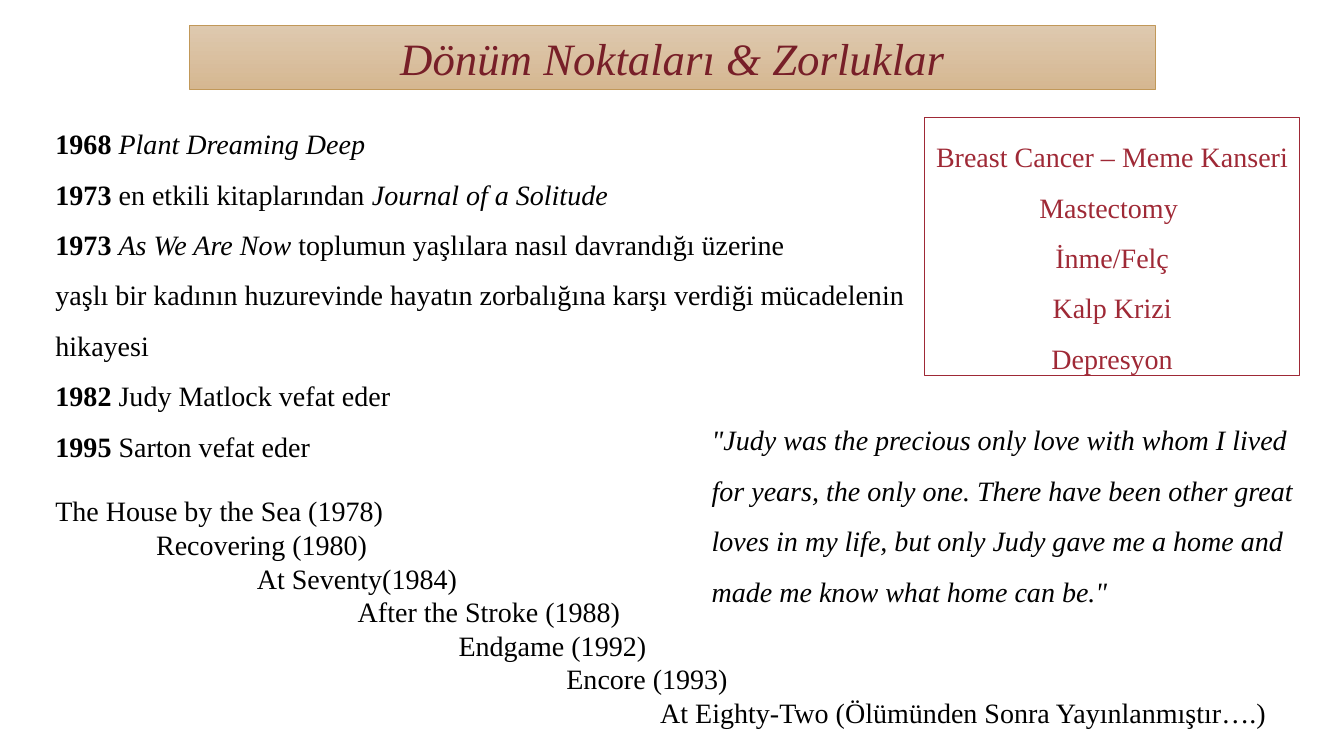
from pptx import Presentation
from pptx.dml.color import RGBColor
from pptx.enum import shapes, text
from pptx.util import Inches, Pt

FONT = "Times New Roman"
BLACK, RED, DARK_RED, GOLD = "000000", "9F2936", "771F28", "C19859"
TITLE_GRADIENT = ("DEC9AF", "D5B791")
STAIR_STEP = 1.0

# Each paragraph is a list of (text, style); style is "b", "i" or "".
TITLE = [[("Dönüm Noktaları & Zorluklar", "i")]]
TIMELINE = [
    [("1968 ", "b"), ("Plant Dreaming Deep", "i")],
    [("1973 ", "b"), ("en etkili kitaplarından ", ""), ("Journal of a Solitude", "i")],
    [("1973 ", "b"), ("As We Are Now ", "i"),
     ("toplumun yaşlılara nasıl davrandığı üzerine", "")],
    [("yaşlı bir kadının huzurevinde hayatın zorbalığına karşı verdiği "
      "mücadelenin hikayesi", "")],
    [("1982", "b"), (" Judy Matlock vefat eder", "")],
    [("1995", "b"), (" Sarton vefat eder", "")],
]
ILLNESSES = ["Breast Cancer – Meme Kanseri", "Mastectomy ", "İnme/Felç",
             "Kalp Krizi", "Depresyon"]
QUOTE = [[('"Judy was the precious only love with whom I lived for years, the only '
           "one. There have been other great loves in my life, but only Judy gave me "
           'a home and made me know what home can be."', "i")]]
BOOKS = ["The House by the Sea (1978)", "Recovering (1980)", "At Seventy(1984)",
         "After the Stroke (1988)", "Endgame (1992)", " Encore (1993)",
         "At Eighty-Two (Ölümünden Sonra Yayınlanmıştır….)"]

# left, top, width, height in inches
TITLE_AREA = (1.88, 0.25, 9.58, 0.64)
TIMELINE_AREA = (0.45, 1.04, 9.23, 3.57)
ILLNESS_AREA = (9.17, 1.17, 3.72, 2.56)
QUOTE_AREA = (6.96, 3.98, 6.22, 2.06)
BOOKS_AREA = (0.45, 4.85, 12.57, 2.46)


def color(value):
    return RGBColor.from_string(value)


def plain(lines):
    """Turn strings into unstyled one-run paragraphs."""
    return [[(line, "")] for line in lines]


def place(shape, area):
    shape.left, shape.top, shape.width, shape.height = map(Inches, area)


def outline(shape, value, width):
    shape.line.color.rgb = color(value)
    shape.line.width = Pt(width)


def write(shape, paragraphs, size=20, ink=BLACK, align=text.PP_ALIGN.LEFT,
          spacing=1.5, step=0, wrap=True, anchor=text.MSO_ANCHOR.TOP):
    """Fill a shape with text, indenting each paragraph one step further."""
    frame = shape.text_frame
    frame.word_wrap = wrap
    frame.auto_size = text.MSO_AUTO_SIZE.NONE
    frame.vertical_anchor = anchor
    for index, runs in enumerate(paragraphs):
        paragraph = frame.add_paragraph() if index else frame.paragraphs[0]
        paragraph.alignment = align
        paragraph.line_spacing = spacing
        paragraph.space_before = Pt(0)
        properties = paragraph._p.get_or_add_pPr()
        properties.set("marL", str(Inches(step * index)))
        properties.set("indent", "0")
        properties.append(properties.makeelement(
            "{http://schemas.openxmlformats.org/drawingml/2006/main}buNone", {}))
        for content, style in runs:
            run = paragraph.add_run()
            run.text = content
            run.font.name, run.font.size = FONT, Pt(size)
            run.font.bold, run.font.italic = style == "b", style == "i"
            run.font.color.rgb = color(ink)


def main():
    presentation = Presentation()
    presentation.slide_width, presentation.slide_height = Inches(13.33), Inches(7.5)
    slide = presentation.slides.add_slide(presentation.slide_layouts[1])
    center = text.PP_ALIGN.CENTER

    title = slide.shapes.title
    place(title, TITLE_AREA)
    title.fill.gradient()
    title.fill.gradient_angle = 270
    for stop, value in zip(title.fill.gradient_stops, TITLE_GRADIENT):
        stop.color.rgb = color(value)
    outline(title, GOLD, 0.5)
    write(title, TITLE, size=32, ink=DARK_RED, align=center, spacing=1.0,
          anchor=text.MSO_ANCHOR.MIDDLE)

    timeline = slide.placeholders[1]
    place(timeline, TIMELINE_AREA)
    write(timeline, TIMELINE)

    illness_box = slide.shapes.add_shape(shapes.MSO_SHAPE.RECTANGLE,
                                         *map(Inches, ILLNESS_AREA))
    illness_box.shadow.inherit = False
    illness_box.fill.background()
    outline(illness_box, RED, 0.75)
    write(illness_box, plain(ILLNESSES), ink=RED, align=center, wrap=False)

    quote = slide.shapes.add_textbox(*map(Inches, QUOTE_AREA))
    write(quote, QUOTE)

    books = slide.shapes.add_textbox(*map(Inches, BOOKS_AREA))
    write(books, plain(BOOKS), spacing=1.0, step=STAIR_STEP)

    presentation.save("out.pptx")


if __name__ == "__main__":
    main()
